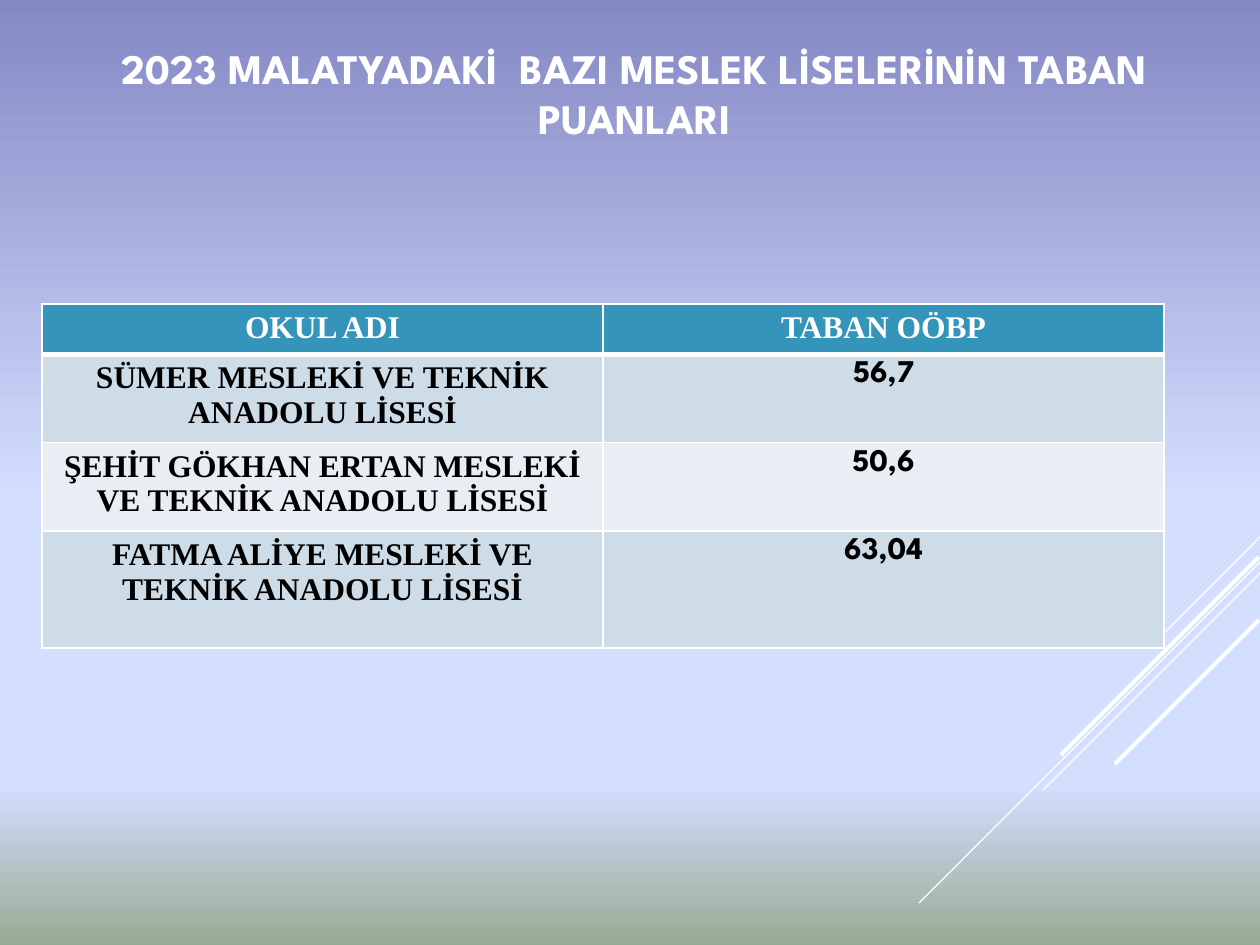
from typing import NamedTuple

from lxml.etree import SubElement
from pptx import Presentation
from pptx.dml.color import RGBColor
from pptx.enum.shapes import MSO_CONNECTOR
from pptx.enum.text import MSO_ANCHOR, PP_ALIGN
from pptx.oxml.ns import qn
from pptx.util import Emu, Pt

PX_PER_INCH = 126
WHITE, BLACK, TEAL = "FFFFFF", "000000", "3494BA"
BANDS = ("CEDCE7", "E8EEF3")
HEADING_FONT, NAME_FONT = "League Spartan", "Times New Roman"


class Stop(NamedTuple):
    percent: int
    color: str


class Ray(NamedTuple):
    right: int
    top: int
    reach: int
    weight: float


class School(NamedTuple):
    name: str
    score: str
    height: int


SKY = [Stop(0, "8488C4"), Stop(53, "D4DEFF"), Stop(83, "D4DEFF"), Stop(100, "96AB94")]
RAYS = [
    Ray(1260, 537, 104, 0.75),
    Ray(1260, 562, 341, 0.75),
    Ray(1260, 573, 217, 0.75),
    Ray(1259, 557, 198, 2.25),
    Ray(1259, 620, 144, 2.25),
]
SCHOOLS = [
    School("SÜMER MESLEKİ VE TEKNİK ANADOLU LİSESİ", "56,7", 82),
    School("ŞEHİT GÖKHAN ERTAN MESLEKİ VE TEKNİK ANADOLU LİSESİ", "50,6", 82),
    School("FATMA ALİYE MESLEKİ VE TEKNİK ANADOLU LİSESİ", "63,04", 117),
]
HEADER_HEIGHT = 47
COLUMN_WIDTH = 561


def px(length: int) -> Emu:
    return Emu(round(length * 914400 / PX_PER_INCH))


def rgb(color: str) -> RGBColor:
    return RGBColor.from_string(color)


def paint_background(slide, stops: list[Stop]) -> None:
    fill = slide.background.fill
    fill.gradient()
    fill.gradient_angle = 270
    stop_list = slide.background._cSld.find(".//" + qn("a:gsLst"))
    for old in list(stop_list):
        stop_list.remove(old)
    for stop in stops:
        entry = SubElement(stop_list, qn("a:gs"), pos=str(stop.percent * 1000))
        SubElement(entry, qn("a:srgbClr"), val=stop.color)


def draw_ray(slide, ray: Ray) -> None:
    line = slide.shapes.add_connector(
        MSO_CONNECTOR.STRAIGHT,
        px(ray.right), px(ray.top),
        px(ray.right - ray.reach), px(ray.top + ray.reach),
    )
    line.line.color.rgb = rgb(WHITE)
    line.line.width = Pt(ray.weight)
    SubElement(line._element.spPr, qn("a:effectLst"))


def write(frame, text: str, font_name: str, size: int, color: str) -> None:
    frame.word_wrap = True
    paragraph = frame.paragraphs[0]
    paragraph.text = text
    paragraph.alignment = PP_ALIGN.CENTER
    font = paragraph.font
    font.name, font.size, font.bold = font_name, Pt(size), True
    font.color.rgb = rgb(color)


def draw_title(slide, text: str) -> None:
    title = slide.shapes.add_textbox(px(44), px(16), px(1181), px(154))
    title.text_frame.vertical_anchor = MSO_ANCHOR.MIDDLE
    write(title.text_frame, text, HEADING_FONT, 24, WHITE)


def border_cell(cell, bottom: int, top: int) -> None:
    properties = cell._tc.get_or_add_tcPr()
    widths = {"a:lnL": 1, "a:lnR": 1, "a:lnT": top, "a:lnB": bottom}
    for position, (side, weight) in enumerate(widths.items()):
        edge = SubElement(properties, qn(side), w=str(Pt(weight)))
        SubElement(SubElement(edge, qn("a:solidFill")), qn("a:srgbClr"), val=WHITE)
        properties.insert(position, edge)


def fill_cell(cell, text: str, font: str, color: str, fill: str,
              top: int = 1, bottom: int = 1) -> None:
    write(cell.text_frame, text, font, 18, color)
    cell.fill.solid()
    cell.fill.fore_color.rgb = rgb(fill)
    border_cell(cell, bottom, top)


def draw_scores(slide, headings: tuple[str, str], schools: list[School]) -> None:
    heights = [HEADER_HEIGHT] + [school.height for school in schools]
    scores = slide.shapes.add_table(
        len(heights), len(headings), px(42), px(304),
        px(COLUMN_WIDTH * len(headings)), px(sum(heights)),
    ).table
    for column in scores.columns:
        column.width = px(COLUMN_WIDTH)
    for row, height in zip(scores.rows, heights):
        row.height = px(height)
    for column, heading in enumerate(headings):
        fill_cell(scores.cell(0, column), heading, NAME_FONT, WHITE, TEAL, bottom=3)
    for row, school in enumerate(schools, 1):
        band = BANDS[(row - 1) % len(BANDS)]
        top = 3 if row == 1 else 1
        fill_cell(scores.cell(row, 0), school.name, NAME_FONT, BLACK, band, top)
        fill_cell(scores.cell(row, 1), school.score, HEADING_FONT, BLACK, band, top)


def main() -> None:
    deck = Presentation()
    deck.slide_width, deck.slide_height = px(1260), px(945)
    slide = deck.slides.add_slide(deck.slide_layouts[6])
    paint_background(slide, SKY)
    for ray in RAYS:
        draw_ray(slide, ray)
    draw_title(slide, "2023 MALATYADAKİ  BAZI MESLEK LİSELERİNİN TABAN PUANLARI")
    draw_scores(slide, ("OKUL ADI", "TABAN OÖBP"), SCHOOLS)
    deck.save("out.pptx")


if __name__ == "__main__":
    main()
